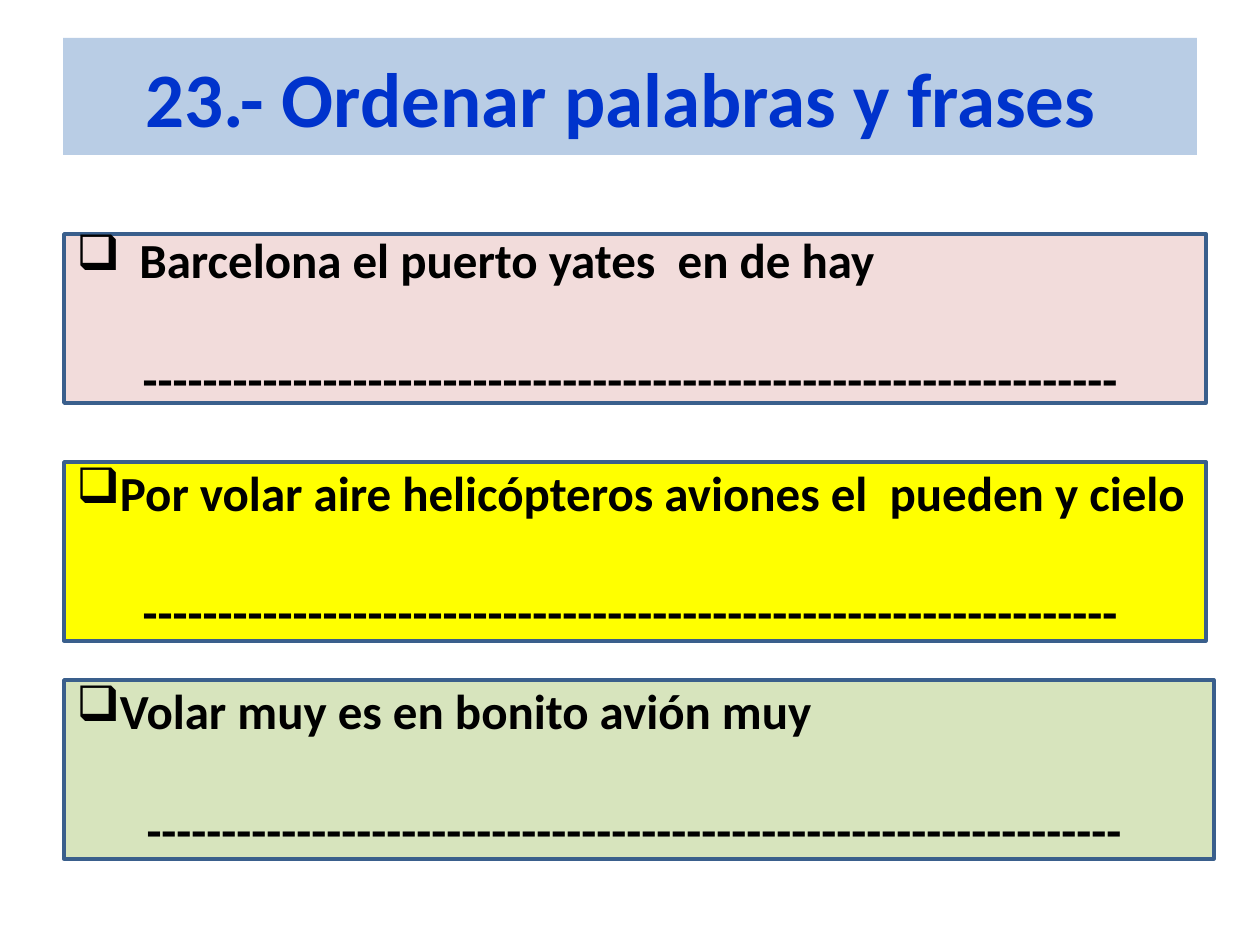
from lxml.etree import SubElement
from pptx import Presentation
from pptx.dml.color import RGBColor
from pptx.enum.shapes import MSO_SHAPE as SHAPE
from pptx.enum.text import MSO_ANCHOR as ANCHOR, PP_ALIGN as ALIGN
from pptx.oxml.ns import qn
from pptx.util import Pt

PX = 914400 // 126
TITLE = "23.- Ordenar palabras y frases "
TITLE_BOX = (63, 38, 1134, 117)
ANSWER = "-" * 65 + " "
LEFT = 64
# sentence, top, width, height, bullet indent, fill
EXERCISES = [
    ("Barcelona el puerto yates  en de hay", 234, 1142, 169, 63, "F2DCDB"),
    ("Por volar aire helicópteros aviones el  pueden y cielo",
     462, 1142, 179, 39, "FFFF00"),
    ("Volar muy es en bonito avión muy", 680, 1150, 179, 39, "D7E4BD"),
]


def rgb(value):
    return RGBColor.from_string(value)


def fill(sp, color):
    sp.fill.solid()
    sp.fill.fore_color.rgb = rgb(color)


def add_run(p, text, size, color):
    r = p.add_run()
    r.text = text
    r.font.name = "Calibri"
    r.font.size = Pt(size)
    r.font.bold = True
    r.font.color.rgb = rgb(color)


def add_bullet(p, indent):
    pPr = p._p.get_or_add_pPr()
    pPr.set("marL", str(indent * PX))
    pPr.set("indent", str(-indent * PX))
    SubElement(pPr, qn("a:buChar")).set("char", "❑")


def add_exercise(slide, sentence, top, width, height, indent, color):
    sp = slide.shapes.add_shape(
        SHAPE.RECTANGLE, *(n * PX for n in (LEFT, top, width, height)))
    sp.shadow.inherit = False
    fill(sp, color)
    sp.line.color.rgb = rgb("3A5F8C")
    sp.line.width = Pt(2)
    tf = sp.text_frame
    tf.word_wrap = True
    tf.vertical_anchor = ANCHOR.MIDDLE
    p = tf.paragraphs[0]
    p.alignment = ALIGN.LEFT
    add_bullet(p, indent)
    add_run(p, sentence, 28, "000000")
    p = tf.add_paragraph()
    p.alignment = ALIGN.CENTER
    p.space_before = Pt(34)
    add_run(p, ANSWER, 28, "000000")


prs = Presentation()
prs.slide_width, prs.slide_height = 1260 * PX, 945 * PX
slide = prs.slides.add_slide(prs.slide_layouts[5])

title = slide.shapes.title
title.left, title.top, title.width, title.height = (n * PX for n in TITLE_BOX)
fill(title, "B9CDE5")
title.text_frame.vertical_anchor = ANCHOR.MIDDLE
p = title.text_frame.paragraphs[0]
p.alignment = ALIGN.CENTER
add_run(p, TITLE, 44, "0033CC")

for exercise in EXERCISES:
    add_exercise(slide, *exercise)

prs.save("out.pptx")
